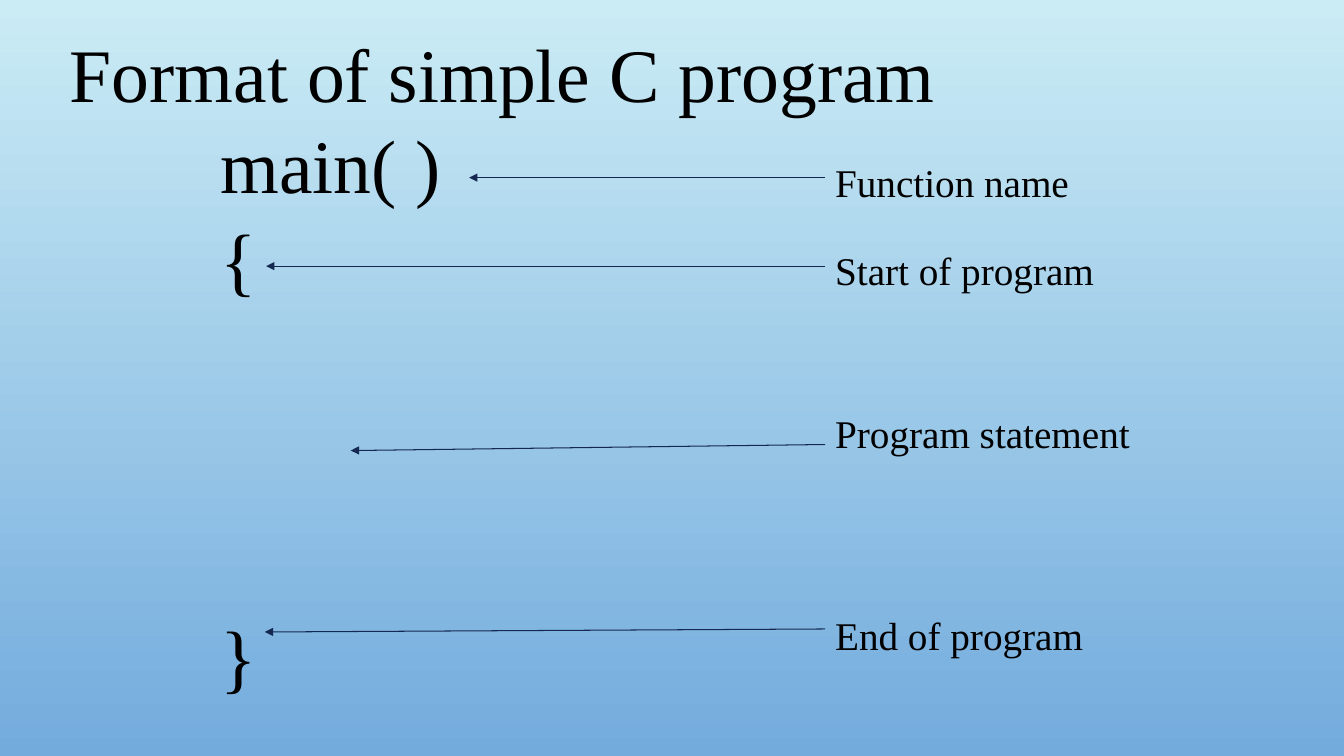
import pptx
import pptx.util
import pptx.dml.color
import pptx.enum.shapes
import pptx.enum.text
import pptx.oxml.ns
import lxml.etree


def color(hex_string):
    return pptx.dml.color.RGBColor.from_string(hex_string)


class ProgramSlide:
    FONT = "Times New Roman"
    INK = "000000"
    ARROW = "142852"
    SKY = ("CBECF5", "73ABDD")

    def __init__(self, deck):
        self.column = deck.slide_width / 100
        self.row = deck.slide_height / 100
        self.slide = deck.slides.add_slide(deck.slide_layouts[5])
        fill = self.slide.background.fill
        fill.gradient()
        fill.gradient_angle = 270
        for stop, shade in zip(fill.gradient_stops, self.SKY):
            stop.color.rgb = color(shade)

    def place(self, column, row):
        return round(column * self.column), round(row * self.row)

    def set_lines(self, box, lines, size, gaps=(), inset=(0, 0)):
        frame = box.text_frame
        frame.text = "\n".join(lines)
        frame.word_wrap = True
        frame.auto_size = pptx.enum.text.MSO_AUTO_SIZE.NONE
        frame.vertical_anchor = pptx.enum.text.MSO_ANCHOR.TOP
        frame.margin_left, frame.margin_top = map(pptx.util.Inches, inset)
        frame.margin_right = frame.margin_bottom = 0
        for paragraph in frame.paragraphs:
            paragraph.alignment = pptx.enum.text.PP_ALIGN.LEFT
            paragraph.font.name = self.FONT
            paragraph.font.size = pptx.util.Pt(size)
            paragraph.font.color.rgb = color(self.INK)
        for paragraph, gap in zip(frame.paragraphs[1:], gaps):
            paragraph.space_before = pptx.util.Pt(gap)

    def title(self, wording, column, row, columns, rows):
        heading = self.slide.shapes.title
        heading.left, heading.top = self.place(column, row)
        heading.width, heading.height = self.place(columns, rows)
        self.set_lines(heading, [wording], 54)

    def text(self, lines, column, row, columns, rows, size, **spacing):
        box = self.slide.shapes.add_textbox(
            *self.place(column, row), *self.place(columns, rows))
        self.set_lines(box, lines, size, **spacing)
        return box

    def arrow(self, start, tip):
        line = self.slide.shapes.add_connector(
            pptx.enum.shapes.MSO_CONNECTOR.STRAIGHT,
            *self.place(*start), *self.place(*tip))
        line.line.color.rgb = color(self.ARROW)
        line.line.width = pptx.util.Pt(0.75)
        qn = pptx.oxml.ns.qn
        properties = line._element.spPr
        lxml.etree.SubElement(properties.find(qn("a:ln")), qn("a:tailEnd"), type="triangle")
        lxml.etree.SubElement(properties, qn("a:effectLst"))
        return line


def main():
    deck = pptx.Presentation()
    deck.slide_width = pptx.util.Inches(13.33)
    deck.slide_height = pptx.util.Inches(7.5)
    page = ProgramSlide(deck)

    page.title("Format of simple C program", 5.2, 3.5, 92, 12)
    page.text(["main( )", "{", "}"], 16.4, 15.6, 18, 78, 54, gaps=(2, 219))

    label_column, label_rows = 61.4, 7.6
    middle = label_rows / 2
    explanations = [
        ("Function name", 19.7, middle, 34.9, middle),
        ("Start of program", 31.4, middle, 19.8, middle),
        ("Program statement", 53, 5.8, 26.1, 6.6),
        ("End of program", 79.7, 3.5, 19.7, 3.9),
    ]
    for wording, row, start_drop, tip_column, tip_drop in explanations:
        label = page.text([wording], label_column, row, 36.3, label_rows, 28,
                          inset=(0.1, 0.09))
        pointer = page.arrow((label_column, row + start_drop),
                             (tip_column, row + tip_drop))
        if start_drop == middle:
            pointer.begin_connect(label, 1)

    deck.save("out.pptx")


if __name__ == "__main__":
    main()
